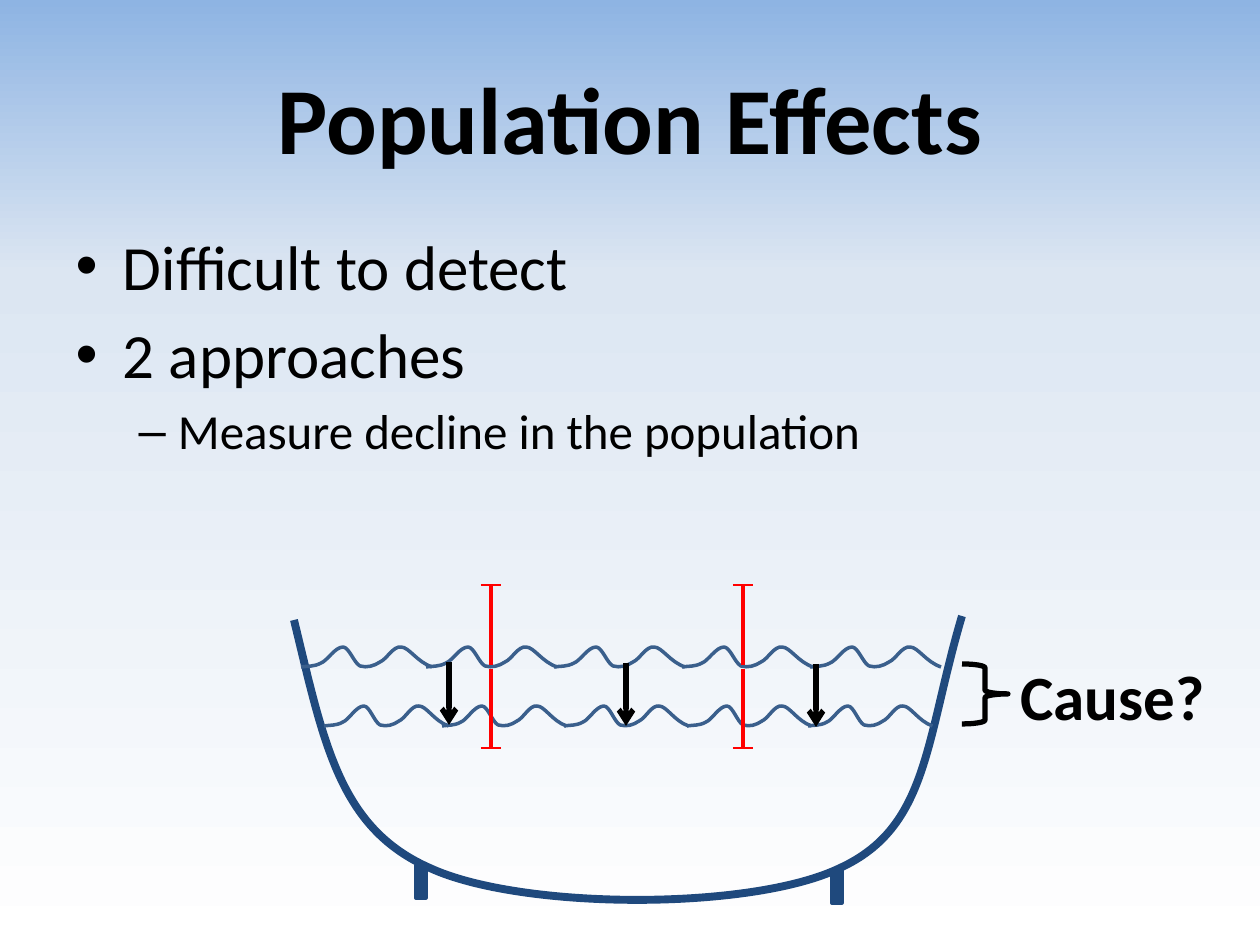
from copy import deepcopy

from pptx import Presentation
from pptx.dml.color import RGBColor
from pptx.enum import shapes, text
from pptx.oxml import ns, xmlchemy
from pptx.util import Pt

SCALE = 914400 / 126
NAVY, WATER, RED, BLACK = "1F497D", "3A5F8C", "FF0000", "000000"
BOWL = [(294, 620), (324, 743), (339, 828), (430, 868), (521, 910),
        (751, 911), (840, 868), (929, 827), (925, 741), (962, 616)]
RIPPLE = [(0, 0), (6, -1), (13, 0), (20, -4), (26, -6), (34, -20), (42, -20),
          (48, -20), (53, -4), (59, -1), (66, 1), (73, -1), (79, -5),
          (86, -8), (92, -21), (100, -20), (108, -20), (116, -5), (131, 0)]
HIGH, LOW = (301, 426, 554, 682, 810), (324, 442, 564, 687, 808)


def emu(*px):
    return [round(n * SCALE) for n in px]


def tint(code):
    return RGBColor.from_string(code)


class Deck:
    """Holds the text style and the current slide, and draws on it."""

    def __init__(self, font="Calibri"):
        self.font = font
        self.prs = Presentation()
        self.prs.slide_width, self.prs.slide_height = emu(1260, 945)
        self.slide = self.prs.slides.add_slide(self.prs.slide_layouts[1])
        self.shapes = self.slide.shapes

    def group(self):
        self.shapes = self.slide.shapes.add_group_shape().shapes

    def ungroup(self):
        self.shapes = self.slide.shapes

    def back(self, stops):
        fill = self.slide.background.fill
        fill.gradient()
        fill.gradient_angle = 270
        items = self.slide.element.find(".//" + ns.qn("a:gsLst"))
        while len(items) < len(stops):
            items.append(deepcopy(items[-1]))
        for stop, (place, code) in zip(fill.gradient_stops, stops):
            stop.position = place
            stop.color.rgb = tint(code)

    def style(self, para, size, bold=False):
        font = para.font
        font.name, font.size, font.bold = self.font, Pt(size), bold
        font.color.rgb = tint(BLACK)

    def place(self, shape, box):
        shape.left, shape.top, shape.width, shape.height = emu(*box)

    def title(self, words, box, size):
        shape = self.slide.shapes.title
        self.place(shape, box)
        shape.text_frame.text = words
        self.style(shape.text_frame.paragraphs[0], size, True)

    def bullets(self, items, box):
        shape = self.slide.placeholders[1]
        self.place(shape, box)
        frame = shape.text_frame
        frame.text = "\n".join(words for words, *_ in items)
        for para, (_, level, size) in zip(frame.paragraphs, items):
            para.level = level
            self.style(para, size)

    def label(self, words, box, size):
        frame = self.shapes.add_textbox(*emu(*box)).text_frame
        frame.word_wrap = False
        frame.auto_size = text.MSO_AUTO_SIZE.SHAPE_TO_FIT_TEXT
        frame.text = words
        self.style(frame.paragraphs[0], size, True)

    def paint(self, shape, code, width, fill=None):
        shape.shadow.inherit = False
        shape.line.color.rgb = tint(code)
        shape.line.width = Pt(width)
        if fill:
            shape.fill.solid()
            shape.fill.fore_color.rgb = tint(fill)
        else:
            shape.fill.background()

    def shape(self, kind, box, code, width, fill=None):
        shape = self.shapes.add_shape(kind, *emu(*box))
        self.paint(shape, code, width, fill)

    def curve(self, pts, code, width, tall=None):
        first, *rest = [emu(*p) for p in pts]
        form = self.shapes.build_freeform(*first)
        form.add_line_segments(rest, close=False)
        shape = form.convert_to_shape()
        self.paint(shape, code, width)
        route = shape._element.find(".//" + ns.qn("a:path"))
        legs = route.findall(ns.qn("a:lnTo"))
        for i in range(0, len(legs), 3):
            bend = xmlchemy.OxmlElement("a:cubicBezTo")
            for leg in legs[i:i + 3]:
                bend.append(leg[0])
                route.remove(leg)
            route.append(bend)
        if tall:
            shape.height = emu(tall)[0]
            route.set("h", str(shape.height))

    def line(self, start, end, code, width, arrow=False):
        kind = shapes.MSO_CONNECTOR.STRAIGHT
        wire = self.shapes.add_connector(kind, *emu(*start, *end))
        wire.line.color.rgb = tint(code)
        wire.line.width = Pt(width)
        if arrow:
            tip = xmlchemy.OxmlElement("a:tailEnd")
            tip.set("type", "arrow")
            wire.line._get_or_add_ln().append(tip)
        wire._element.spPr.append(xmlchemy.OxmlElement("a:effectLst"))

    def waves(self, base, ratio, starts):
        for left in starts:
            self.curve([(left + x * ratio, base + y) for x, y in RIPPLE], WATER, 2)

    def gauge(self, x):
        ends = (665, 585), (748, 669)
        for low, high in ends:
            self.line((x, low), (x, high), RED, 2.25)
        for y in (585, 748):
            self.line((x - 10, y), (x + 10, y), RED, 0.75)


def main():
    deck = Deck()
    kinds = shapes.MSO_SHAPE
    deck.back([(0, "8EB4E3"), (0.29, "DCE6F2"), (1, "FFFFFF")])
    deck.title("Population Effects", (63, 38, 1134, 158), 54)
    deck.bullets([("Difficult to detect", 0, 36), ("2 approaches", 0, 36),
                  ("Measure decline in the population", 1, 28)],
                 (63, 221, 1134, 624))
    deck.curve(BOWL, NAVY, 4.5, 283)
    deck.shape(kinds.RECTANGLE, (416, 865, 10, 33), NAVY, 2, NAVY)
    deck.group()
    deck.waves(667, 1, HIGH)
    deck.ungroup()
    deck.shape(kinds.RECTANGLE, (832, 870, 10, 33), NAVY, 2, NAVY)
    deck.group()
    deck.waves(726, 0.95, LOW)
    for x, y in ((449, 662), (626, 663), (816, 664)):
        deck.line((x, y), (x, y + 63), BLACK, 3, arrow=True)
    deck.group()
    for x in (491, 743):
        deck.gauge(x)
    deck.group()
    deck.shape(kinds.RIGHT_BRACE, (962, 664, 46, 60), BLACK, 3)
    deck.label("Cause?", (1008, 651, 212, 89), 36)
    deck.prs.save("out.pptx")


if __name__ == "__main__":
    main()
